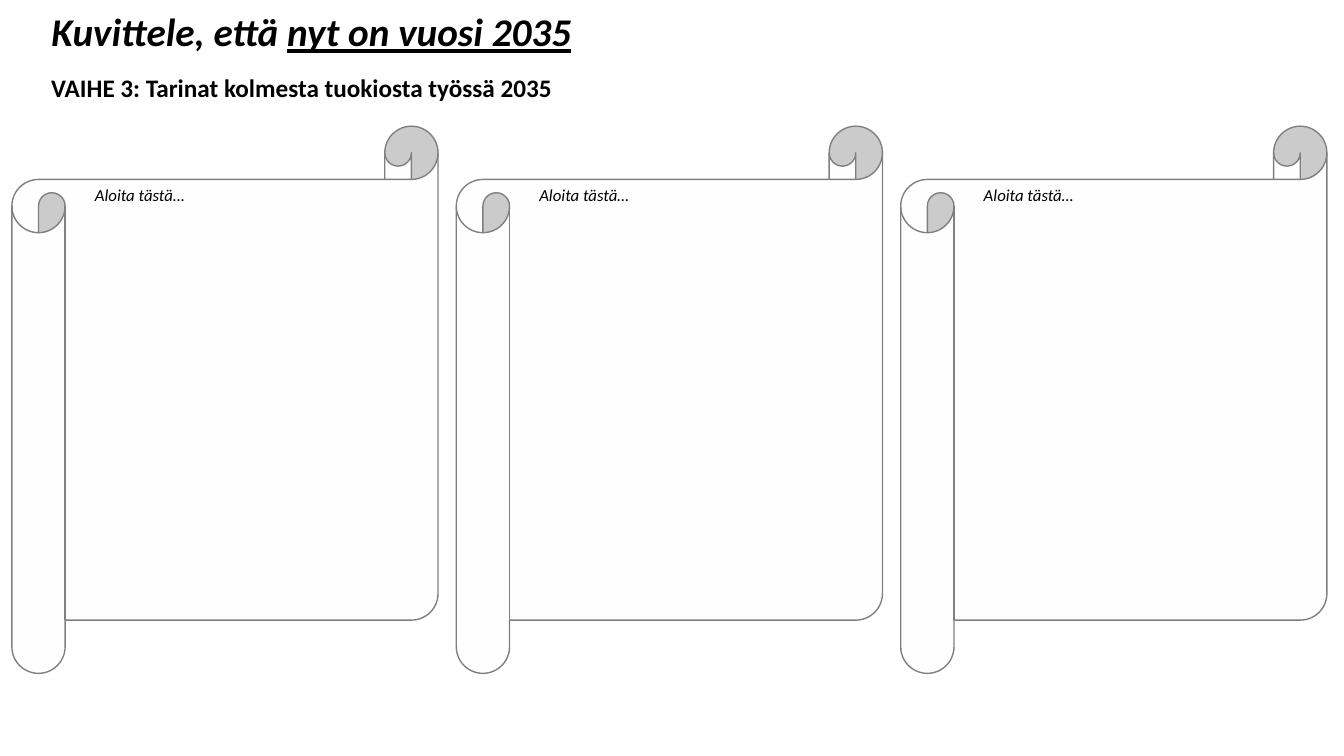
from dataclasses import dataclass

from pptx import Presentation
from pptx.dml.color import RGBColor
from pptx.enum import shapes, text
from pptx.util import Cm, Pt


@dataclass(frozen=True)
class Theme:
    font: str = "Calibri"
    ink: RGBColor = RGBColor(0x00, 0x00, 0x00)
    white: RGBColor = RGBColor(0xFF, 0xFF, 0xFF)
    paper: RGBColor = RGBColor(0xFE, 0xFE, 0xFE)
    outline: RGBColor = RGBColor(0x80, 0x80, 0x80)
    title_size: int = 28
    subtitle_size: int = 18
    story_size: int = 12


@dataclass(frozen=True)
class Area:
    """Position and size in centimetres."""
    left: float
    top: float
    width: float
    height: float

    def lengths(self) -> tuple:
        return Cm(self.left), Cm(self.top), Cm(self.width), Cm(self.height)


THEME = Theme()
TITLE_AREA = Area(1.04, 0.1, 18.19, 1.42)
SUBTITLE_AREA = Area(1.04, 1.7, 13.77, 1.02)
SCROLL_PITCH = 11.2
SCROLLS = [Area(0.3 + SCROLL_PITCH * column, 3.18, 10.74, 13.79) for column in range(3)]


def add_span(para, wording: str, *, size: int, bold: bool = False,
             italic: bool = False, underline: bool = False) -> None:
    span = para.add_run()
    span.text = wording
    font = span.font
    font.name, font.size = THEME.font, Pt(size)
    font.bold, font.italic, font.underline = bold, italic, underline
    font.color.rgb = THEME.ink


def add_title(page) -> None:
    title = page.shapes.title
    title.left, title.top, title.width, title.height = TITLE_AREA.lengths()
    frame = title.text_frame
    frame.auto_size = text.MSO_AUTO_SIZE.NONE
    frame.vertical_anchor = text.MSO_ANCHOR.BOTTOM
    para = frame.paragraphs[0]
    para.alignment = text.PP_ALIGN.LEFT
    para.line_spacing = 0.9
    add_span(para, "Kuvittele, että ", size=THEME.title_size, bold=True, italic=True)
    add_span(para, "nyt on vuosi 2035", size=THEME.title_size,
             bold=True, italic=True, underline=True)


def add_subtitle(page) -> None:
    box = page.shapes.add_textbox(*SUBTITLE_AREA.lengths())
    box.fill.solid()
    box.fill.fore_color.rgb = THEME.white
    frame = box.text_frame
    frame.word_wrap = False
    frame.auto_size = text.MSO_AUTO_SIZE.SHAPE_TO_FIT_TEXT
    add_span(frame.paragraphs[0], "VAIHE 3: Tarinat kolmesta tuokiosta työssä 2035",
             size=THEME.subtitle_size, bold=True)


def add_story_scroll(page, area: Area) -> None:
    scroll = page.shapes.add_shape(shapes.MSO_SHAPE.HORIZONTAL_SCROLL, *area.lengths())
    scroll.shadow.inherit = False
    scroll.fill.solid()
    scroll.fill.fore_color.rgb = THEME.paper
    scroll.line.color.rgb = THEME.outline
    scroll.line.width = Pt(1)
    frame = scroll.text_frame
    frame.word_wrap = True
    frame.vertical_anchor = text.MSO_ANCHOR.TOP
    para = frame.paragraphs[0]
    para.alignment = text.PP_ALIGN.LEFT
    para._p.get_or_add_pPr().set("marL", str(Cm(0.5)))
    add_span(para, "Aloita tästä…", size=THEME.story_size, italic=True)


def main() -> None:
    deck = Presentation()
    deck.slide_width, deck.slide_height = Cm(33.87), Cm(19.05)
    title_only = deck.slide_layouts[5]
    page = deck.slides.add_slide(title_only)
    add_title(page)
    for area in SCROLLS:
        add_story_scroll(page, area)
    add_subtitle(page)
    deck.save("out.pptx")


if __name__ == "__main__":
    main()
